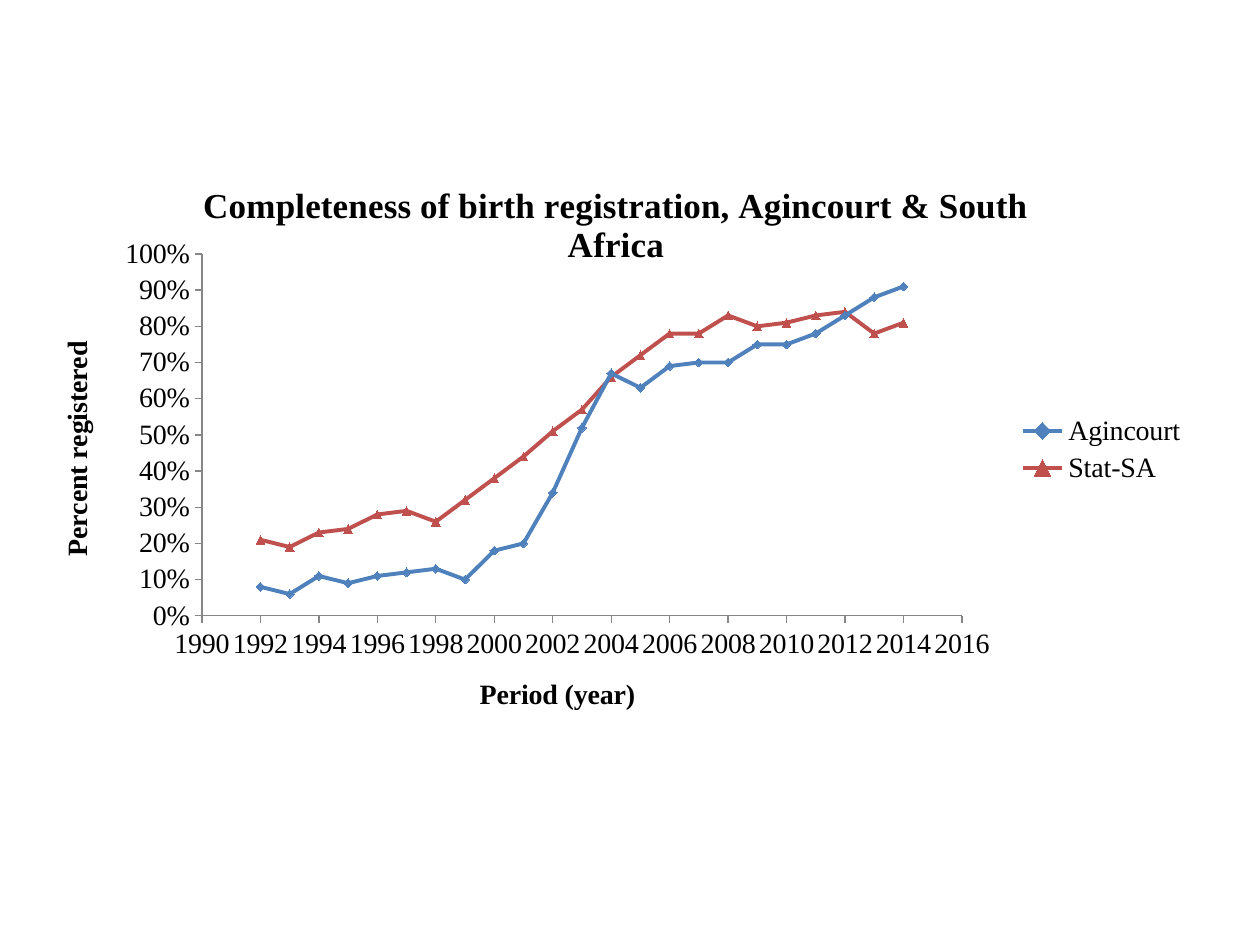
"""Build a slide with a scatter chart of birth registration completeness."""
from lxml.etree import SubElement
from pptx import Presentation
from pptx.chart.data import XyChartData
from pptx.dml.color import RGBColor
from pptx.enum.chart import XL_CHART_TYPE, XL_LEGEND_POSITION, XL_MARKER_STYLE, XL_TICK_MARK
from pptx.oxml.ns import qn
from pptx.util import Pt

PX = 914400 // 126
FONT = "Times New Roman"
COLORS = {"text": "000000", "axis": "868686", "Agincourt": "4F81BD", "Stat-SA": "C0504D"}
TITLE = "Completeness of birth registration, Agincourt & South Africa"
FIRST_YEAR = 1992
SERIES = {
    "Agincourt": [0.08, 0.06, 0.11, 0.09, 0.11, 0.12, 0.13, 0.10, 0.18, 0.20, 0.34, 0.52,
                  0.67, 0.63, 0.69, 0.70, 0.70, 0.75, 0.75, 0.78, 0.83, 0.88, 0.91],
    "Stat-SA": [0.21, 0.19, 0.23, 0.24, 0.28, 0.29, 0.26, 0.32, 0.38, 0.44, 0.51, 0.57,
                0.66, 0.72, 0.78, 0.78, 0.83, 0.80, 0.81, 0.83, 0.84, 0.78, 0.81],
}
MARKERS = {"Agincourt": XL_MARKER_STYLE.DIAMOND, "Stat-SA": XL_MARKER_STYLE.TRIANGLE}
AXES = {
    "category_axis": ("Period (year)", 1990, 2016, 2, "General"),
    "value_axis": ("Percent registered", 0, 1, 0.1, "0%"),
}
CHART_BOX = (32, 158, 1168, 583)
PLOT_BOX = (202, 254, 760, 362)


def color(name):
    return RGBColor.from_string(COLORS[name])


def style_font(font, size, bold=False):
    font.name, font.size, font.bold = FONT, Pt(size), bold
    font.color.rgb = color("text")


def set_title(owner, text, size):
    frame = owner.text_frame
    frame.text = text
    style_font(frame.paragraphs[0].font, size, True)


def style_axis(axis, title, minimum, maximum, step, number_format):
    axis.minimum_scale, axis.maximum_scale, axis.major_unit = minimum, maximum, step
    axis.has_major_gridlines = False
    axis.major_tick_mark = XL_TICK_MARK.OUTSIDE
    axis.minor_tick_mark = XL_TICK_MARK.NONE
    axis.tick_labels.number_format = number_format
    axis.tick_labels.number_format_is_linked = False
    axis.format.line.color.rgb = color("axis")
    axis.format.line.width = Pt(0.75)
    set_title(axis.axis_title, title, 16)


def style_series(series):
    series.smooth = False
    series.format.line.color.rgb = color(series.name)
    series.format.line.width = Pt(2.25)
    marker = series.marker
    marker.style, marker.size = MARKERS[series.name], 5
    marker.format.fill.solid()
    marker.format.fill.fore_color.rgb = color(series.name)
    marker.format.line.color.rgb = color(series.name)


def place_plot(chart):
    area = chart.element.find(".//" + qn("c:plotArea"))
    layout = area.find(qn("c:layout"))
    if layout is None:
        layout = SubElement(area, qn("c:layout"))
        area.insert(0, layout)
    left, top, width, height = CHART_BOX
    plot_left, plot_top, plot_width, plot_height = PLOT_BOX
    settings = {
        "layoutTarget": "inner", "xMode": "edge", "yMode": "edge",
        "x": (plot_left - left) / width, "y": (plot_top - top) / height,
        "w": plot_width / width, "h": plot_height / height,
    }
    manual = SubElement(layout, qn("c:manualLayout"))
    for tag, value in settings.items():
        SubElement(manual, qn(f"c:{tag}")).set("val", str(value))


def main():
    deck = Presentation()
    deck.slide_width, deck.slide_height = 1260 * PX, 945 * PX
    page = deck.slides.add_slide(deck.slide_layouts[6])
    data = XyChartData()
    for name, shares in SERIES.items():
        points = data.add_series(name)
        for year, share in enumerate(shares, FIRST_YEAR):
            points.add_data_point(year, share)
    box = [length * PX for length in CHART_BOX]
    chart = page.shapes.add_chart(XL_CHART_TYPE.XY_SCATTER_LINES, *box, data).chart
    style_font(chart.font, 16)
    chart.has_title = True
    set_title(chart.chart_title, TITLE, 20)
    chart.has_legend = True
    chart.legend.position = XL_LEGEND_POSITION.RIGHT
    chart.legend.include_in_layout = False
    chart.plots[0].vary_by_categories = False
    for name, settings in AXES.items():
        style_axis(getattr(chart, name), *settings)
    for series in chart.plots[0].series:
        style_series(series)
    place_plot(chart)
    deck.save("out.pptx")


if __name__ == "__main__":
    main()
